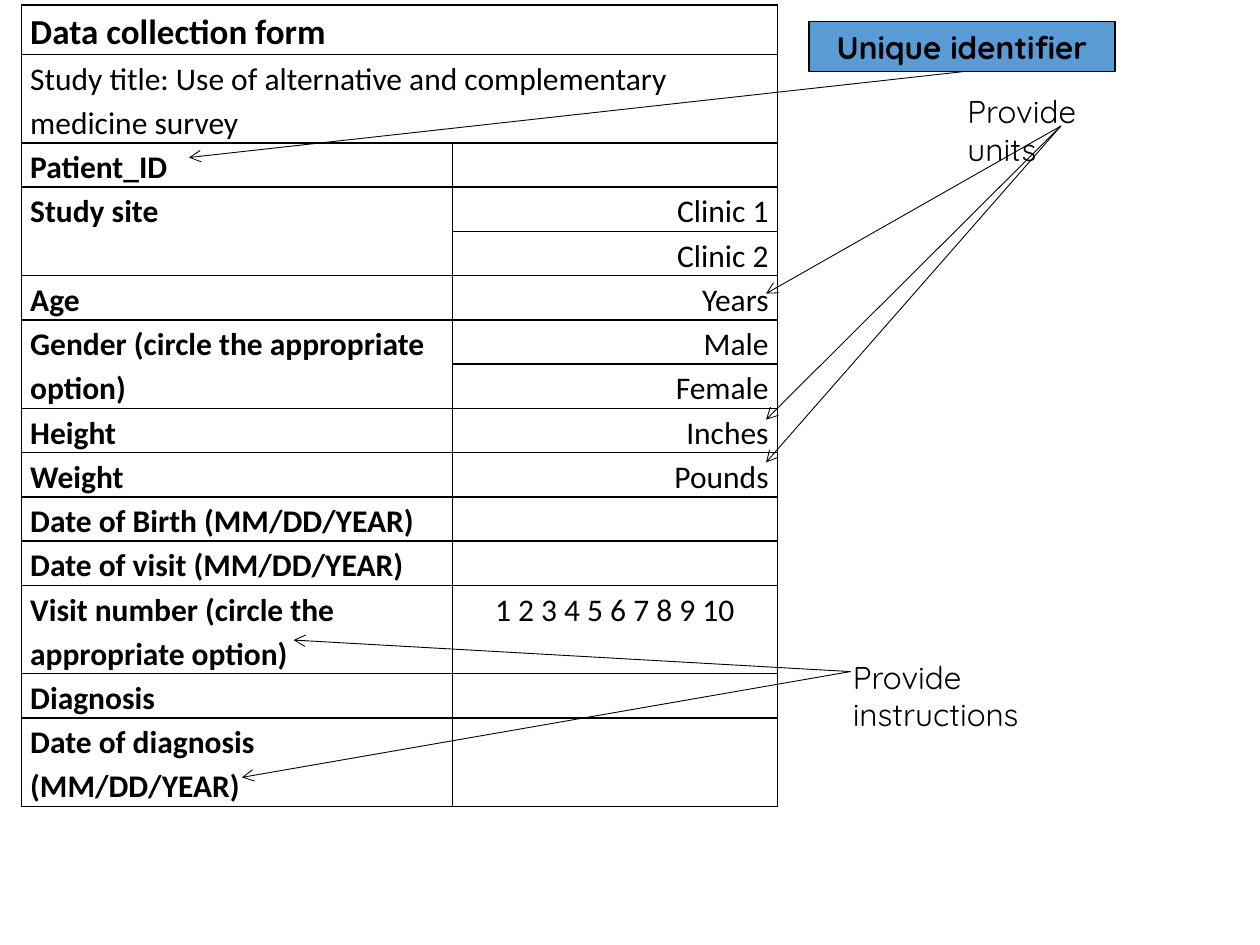
from dataclasses import dataclass

from lxml import etree
from pptx import Presentation
from pptx.dml.color import RGBColor
from pptx.enum.shapes import MSO_CONNECTOR, MSO_SHAPE
from pptx.enum.text import MSO_ANCHOR, PP_ALIGN
from pptx.oxml.ns import qn
from pptx.util import Inches, Pt

STRAIGHT = MSO_CONNECTOR.STRAIGHT
RECTANGLE = MSO_SHAPE.RECTANGLE
MIDDLE = MSO_ANCHOR.MIDDLE
LEFT, CENTER, RIGHT = PP_ALIGN.LEFT, PP_ALIGN.CENTER, PP_ALIGN.RIGHT
BLANK_LAYOUT = 6
BOTTOM_SITE = 2


@dataclass(frozen=True)
class Theme:
    """Colours, fonts and type sizes of the slide."""
    ink: RGBColor = RGBColor(0x00, 0x00, 0x00)
    accent: RGBColor = RGBColor(0x5B, 0x9B, 0xD5)
    form_font: str = "Calibri"
    note_font: str = "Quicksand"
    heading: Pt = Pt(20)
    body: Pt = Pt(18)
    border: Pt = Pt(1)
    outline: Pt = Pt(0.75)
    arrow: Pt = Pt(0.5)


THEME = Theme()

HEADING = "Data collection form"
STUDY = "Study title: Use of alternative and complementary medicine survey"
FIELDS = [
    ("Patient_ID", [""]),
    ("Study site", ["Clinic 1", "Clinic 2"]),
    ("Age", ["Years"]),
    ("Gender (circle the appropriate option)", ["Male", "Female"]),
    ("Height", ["Inches"]),
    ("Weight", ["Pounds"]),
    ("Date of Birth (MM/DD/YEAR)", [""]),
    ("Date of visit (MM/DD/YEAR)", [""]),
    ("Visit number (circle the appropriate option)", ["1 2 3 4 5 6 7 8 9 10"]),
    ("Diagnosis", [""]),
    ("Date of diagnosis (MM/DD/YEAR)", [""]),
]
COLUMN_WIDTHS = (3.42, 2.58)
HEADING_HEIGHT, ROW_HEIGHT = 0.38, 0.35

UNITS_START, UNITS_ENDS = (8.42, 1), [(6.08, 2.33), (6.08, 3.33), (6.08, 3.67)]
STEPS_START, STEPS_ENDS = (6.75, 5.33), [(2.33, 5.08), (1.92, 6.17)]
ID_START, ID_END = (7.63, 0.57), (1.5, 1.25)


def style_paragraph(p, font, size, bold=False, align=LEFT):
    """Format one paragraph."""
    p.alignment = align
    p.font.name = font
    p.font.size = size
    p.font.bold = bold
    p.font.color.rgb = THEME.ink


def style_cell(cell):
    """Give a cell clear fill, tight margins and four black borders."""
    cell.margin_left = cell.margin_right = Inches(0.07)
    cell.margin_top = cell.margin_bottom = 0
    cell.fill.background()
    props = cell._tc.get_or_add_tcPr()
    for i, side in enumerate("LRTB"):
        ln = etree.Element(qn(f"a:ln{side}"), w=str(THEME.border))
        fill = etree.SubElement(ln, qn("a:solidFill"))
        etree.SubElement(fill, qn("a:srgbClr"), val=str(THEME.ink))
        props.insert(i, ln)


def write_cell(cell, text, size=THEME.body, bold=False, align=LEFT):
    """Write text into a table cell."""
    p = cell.text_frame.paragraphs[0]
    p.text = text
    p.line_spacing = 1.15
    style_paragraph(p, THEME.form_font, size, bold, align)


def add_form(s):
    """Add the data collection form as a table."""
    count = 2 + sum(len(values) for _, values in FIELDS)
    frame = s.shapes.add_table(count, 2, Inches(0.17), Inches(0.04),
                               Inches(sum(COLUMN_WIDTHS)), Inches(6.19))
    table = frame.table
    table.first_row = table.horz_banding = False
    for column, width in zip(table.columns, COLUMN_WIDTHS):
        column.width = Inches(width)
    for row in table.rows:
        row.height = Inches(ROW_HEIGHT)
    table.rows[0].height = Inches(HEADING_HEIGHT)
    for cell in table.iter_cells():
        style_cell(cell)

    for i in range(2):
        table.cell(i, 0).merge(table.cell(i, 1))
    write_cell(table.cell(0, 0), HEADING, THEME.heading, bold=True)
    write_cell(table.cell(1, 0), STUDY)

    top = 2
    for label, values in FIELDS:
        if len(values) > 1:
            table.cell(top, 0).merge(table.cell(top + len(values) - 1, 0))
        write_cell(table.cell(top, 0), label, bold=True)
        for i, value in enumerate(values, top):
            align = CENTER if label.startswith("Visit number") else RIGHT
            write_cell(table.cell(i, 1), value, align=align)
        top += len(values)


def add_note(s, text, left, top, width):
    """Add a plain note beside the form."""
    box = s.shapes.add_textbox(Inches(left), Inches(top), Inches(width), Inches(0.4))
    tf = box.text_frame
    tf.word_wrap = True
    p = tf.paragraphs[0]
    p.text = text
    style_paragraph(p, THEME.note_font, THEME.body)


def add_label(s, text, left, top, width):
    """Add a filled label with bold centred text."""
    sp = s.shapes.add_shape(RECTANGLE, Inches(left), Inches(top), Inches(width), Inches(0.4))
    sp.shadow.inherit = False
    sp.fill.solid()
    sp.fill.fore_color.rgb = THEME.accent
    sp.line.color.rgb = THEME.ink
    sp.line.width = THEME.outline
    tf = sp.text_frame
    tf.word_wrap = True
    tf.vertical_anchor = MIDDLE
    p = tf.paragraphs[0]
    p.text = text
    style_paragraph(p, THEME.note_font, THEME.body, bold=True, align=CENTER)
    return sp


def add_arrow(s, start, end):
    """Add a thin arrow pointing at end."""
    points = [Inches(v) for v in (*start, *end)]
    arrow = s.shapes.add_connector(STRAIGHT, *points)
    arrow.line.color.rgb = THEME.ink
    arrow.line.width = THEME.arrow
    etree.SubElement(arrow.line._get_or_add_ln(), qn("a:tailEnd"), type="arrow")
    etree.SubElement(arrow._element.spPr, qn("a:effectLst"))
    return arrow


def main():
    """Build the slide and save it."""
    prs = Presentation()
    prs.slide_width, prs.slide_height = Inches(10), Inches(7.5)
    s = prs.slides.add_slide(prs.slide_layouts[BLANK_LAYOUT])
    add_form(s)
    add_note(s, "Provide units", 7.58, 0.68, 1.66)
    add_note(s, "Provide instructions", 6.67, 5.17, 2.4)
    for end in UNITS_ENDS:
        add_arrow(s, UNITS_START, end)
    for end in STEPS_ENDS:
        add_arrow(s, STEPS_START, end)
    label = add_label(s, "Unique identifier", 6.42, 0.17, 2.43)
    add_arrow(s, ID_START, ID_END).begin_connect(label, BOTTOM_SITE)
    prs.save("out.pptx")


if __name__ == "__main__":
    main()
